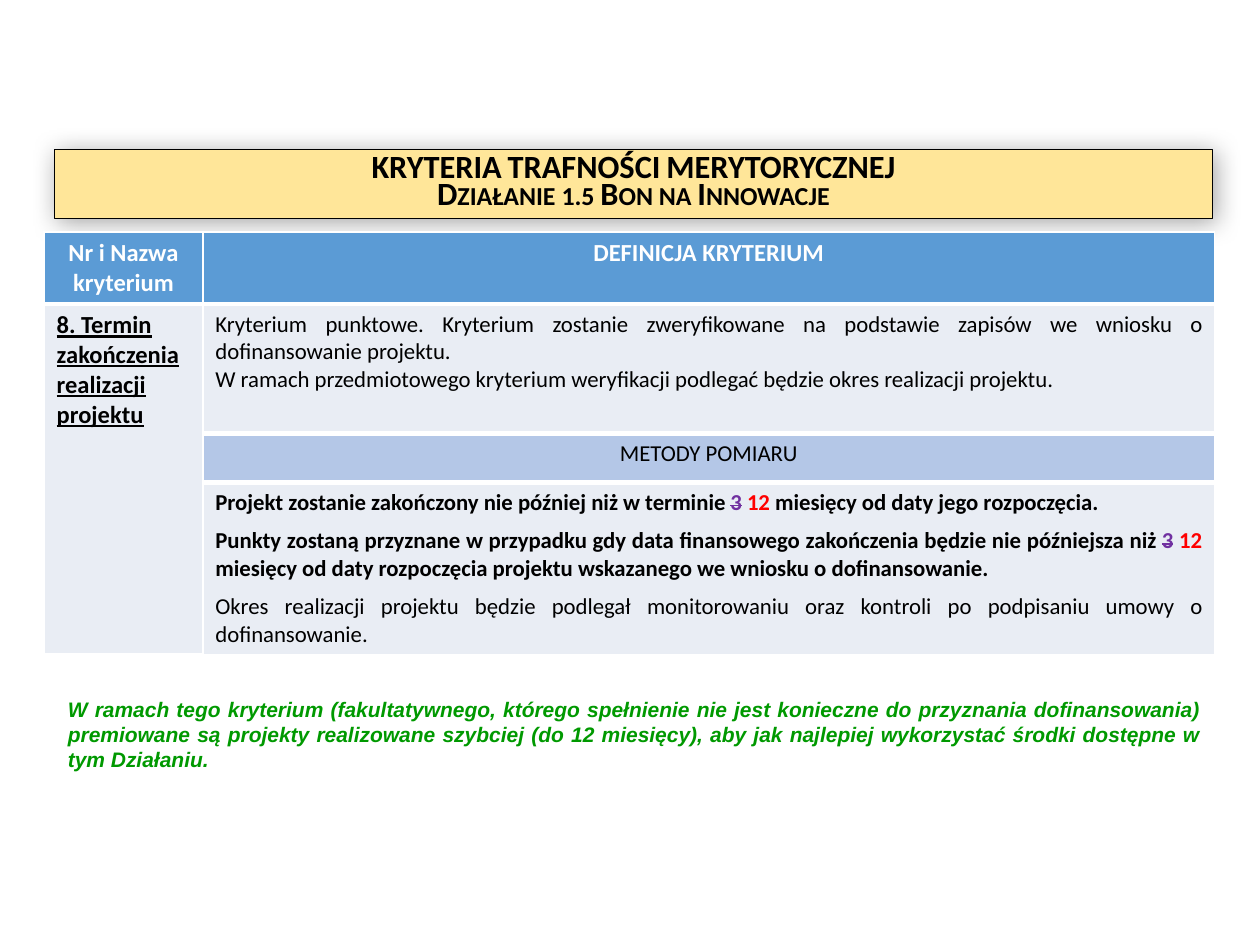
from dataclasses import dataclass

from lxml import etree
from pptx import Presentation
from pptx.dml.color import RGBColor
from pptx.enum import shapes, text
from pptx.oxml import ns
from pptx.util import Pt

ALIGN = text.PP_ALIGN


@dataclass(frozen=True)
class Theme:
    font: str = "Calibri"
    note_font: str = "Arial"
    black: str = "000000"
    white: str = "FFFFFF"
    banner: str = "FFE699"
    header: str = "5B9BD5"
    body: str = "E9EDF4"
    method: str = "B4C7E7"
    old_value: str = "7030A0"
    new_value: str = "FF0000"
    note: str = "009900"
    banner_size: float = 18.5
    header_size: float = 14
    body_size: float = 13
    note_size: float = 12
    thin: float = 1
    thick: float = 3


def add_child(parent, tag, **attributes):
    return etree.SubElement(parent, ns.qn(tag), attributes)


class SlideBuilder:
    def __init__(self, slide, theme):
        self.slide = slide
        self.theme = theme

    def run(self, paragraph, content, size, color=None, bold=False, italic=False,
            underline=False, strike=False, small_caps=False, font=None):
        run = paragraph.add_run()
        run.text = content
        run.font.name = font or self.theme.font
        run.font.size = Pt(size)
        run.font.bold = bold
        run.font.italic = italic
        run.font.underline = underline
        run.font.color.rgb = RGBColor.from_string(color or self.theme.black)
        properties = run.font._element
        if strike:
            properties.set("strike", "sngStrike")
        if small_caps:
            properties.set("cap", "small")

    def paragraphs(self, frame, items, size, align, gap=0, line_spacing=None, **style):
        """Each item is a list of (content, style changes) runs."""
        for index, runs in enumerate(items):
            paragraph = frame.add_paragraph() if index else frame.paragraphs[0]
            paragraph.alignment = align
            paragraph.space_before = Pt(gap if index else 0)
            if line_spacing:
                paragraph.line_spacing = line_spacing
            for content, changes in runs:
                self.run(paragraph, content, size, **{**style, **changes})

    def banner(self, left, top, width, height, lines):
        shape = self.slide.shapes.add_shape(
            shapes.MSO_SHAPE.RECTANGLE, Pt(left), Pt(top), Pt(width), Pt(height))
        shape.fill.solid()
        shape.fill.fore_color.rgb = RGBColor.from_string(self.theme.banner)
        shape.line.color.rgb = RGBColor.from_string(self.theme.black)
        shape.line.width = Pt(0.75)
        self.glow_shadow(shape)
        shape.text_frame.word_wrap = True
        shape.text_frame.vertical_anchor = text.MSO_ANCHOR.MIDDLE
        self.paragraphs(shape.text_frame, [[(line, {})] for line in lines],
                        self.theme.banner_size, ALIGN.CENTER, line_spacing=0.7,
                        bold=True, small_caps=True)

    def glow_shadow(self, shape):
        shape.shadow.inherit = False
        effects = shape._element.spPr.find(ns.qn("a:effectLst"))
        shadow = add_child(effects, "a:outerShdw", blurRad=str(Pt(15)), dist=str(Pt(1.5)),
                           dir="3000000", algn="ctr", rotWithShape="0")
        color = add_child(shadow, "a:srgbClr", val=self.theme.black)
        add_child(color, "a:alpha", val="35000")

    def table(self, left, top, columns, rows):
        frame = self.slide.shapes.add_table(
            len(rows), len(columns), Pt(left), Pt(top), Pt(sum(columns)), Pt(sum(rows)))
        table = frame.table
        table.horz_banding = False
        for column, width in zip(table.columns, columns):
            column.width = Pt(width)
        for row, height in zip(table.rows, rows):
            row.height = Pt(height)
        return table

    def cell(self, cell, fill, items, size, align, **style):
        cell.fill.solid()
        cell.fill.fore_color.rgb = RGBColor.from_string(fill)
        self.paragraphs(cell.text_frame, items, size, align, **style)

    def borders(self, table):
        """Thick rules between rows, thin rules everywhere else."""
        theme = self.theme
        last = len(table.rows) - 1
        for index, row in enumerate(table.rows):
            widths = {"a:lnL": theme.thin, "a:lnR": theme.thin,
                      "a:lnT": theme.thick if index else theme.thin,
                      "a:lnB": theme.thick if index < last else theme.thin}
            for cell in row.cells:
                properties = cell._tc.get_or_add_tcPr()
                for position, (tag, width) in enumerate(widths.items()):
                    line = etree.Element(ns.qn(tag), w=str(Pt(width)))
                    fill = add_child(line, "a:solidFill")
                    add_child(fill, "a:srgbClr", val=theme.white)
                    properties.insert(position, line)

    def note(self, left, top, width, height, content):
        box = self.slide.shapes.add_textbox(Pt(left), Pt(top), Pt(width), Pt(height))
        box.text_frame.word_wrap = True
        box.text_frame.auto_size = text.MSO_AUTO_SIZE.SHAPE_TO_FIT_TEXT
        self.paragraphs(box.text_frame, [[(content, {})]], self.theme.note_size,
                        ALIGN.JUSTIFY, font=self.theme.note_font,
                        color=self.theme.note, bold=True, italic=True)


def criteria_table(builder):
    theme = builder.theme
    table = builder.table(25.2, 132.5, columns=[90.7, 578.2], rows=[40.5, 74, 28, 97])

    for column, heading in enumerate(["Nr i Nazwa kryterium", "DEFINICJA KRYTERIUM"]):
        builder.cell(table.cell(0, column), theme.header, [[(heading, {})]],
                     theme.header_size, ALIGN.CENTER, color=theme.white, bold=True)

    table.cell(1, 0).merge(table.cell(3, 0))
    builder.cell(table.cell(1, 0), theme.body,
                 [[("8. Termin zakończenia realizacji projektu", {})]],
                 theme.header_size, ALIGN.LEFT, bold=True, underline=True)

    definition = [
        "Kryterium punktowe. Kryterium zostanie zweryfikowane na podstawie zapisów "
        "we wniosku o dofinansowanie projektu.",
        "W ramach przedmiotowego kryterium weryfikacji podlegać będzie okres "
        "realizacji projektu.",
    ]
    builder.cell(table.cell(1, 1), theme.body, [[(line, {})] for line in definition],
                 theme.body_size, ALIGN.JUSTIFY)
    builder.cell(table.cell(2, 1), theme.method, [[("METODY POMIARU", {})]],
                 theme.body_size, ALIGN.CENTER)

    bold = {"bold": True}
    changed_term = [("3", {"bold": True, "color": theme.old_value, "strike": True}),
                    (" ", bold),
                    ("12", {"bold": True, "color": theme.new_value})]
    measures = [
        [("Projekt zostanie zakończony nie później niż w terminie ", bold),
         *changed_term,
         (" miesięcy od daty jego rozpoczęcia.", bold)],
        [("Punkty zostaną przyznane w przypadku gdy data finansowego zakończenia "
          "będzie nie późniejsza niż ", bold),
         *changed_term,
         (" miesięcy od daty rozpoczęcia projektu wskazanego we wniosku "
          "o dofinansowanie.", bold)],
        [("Okres realizacji projektu będzie podlegał monitorowaniu oraz kontroli "
          "po podpisaniu umowy o dofinansowanie.", {})],
    ]
    builder.cell(table.cell(3, 1), theme.body, measures, theme.body_size,
                 ALIGN.JUSTIFY, gap=6)
    builder.borders(table)


def main():
    presentation = Presentation()
    presentation.slide_width, presentation.slide_height = Pt(720), Pt(540)
    slide = presentation.slides.add_slide(presentation.slide_layouts[6])
    builder = SlideBuilder(slide, Theme())

    builder.banner(31, 85.5, 662, 39.5,
                   ["KRYTERIA TRAFNOŚCI MERYTORYCZNEJ", "Działanie 1.5 Bon na Innowacje"])
    criteria_table(builder)
    builder.note(31.7, 394.5, 662, 51,
                 "W ramach tego kryterium (fakultatywnego, którego spełnienie nie jest "
                 "konieczne do przyznania dofinansowania) premiowane są projekty "
                 "realizowane szybciej (do 12 miesięcy), aby jak najlepiej wykorzystać "
                 "środki dostępne w tym Działaniu.")
    presentation.save("out.pptx")


if __name__ == "__main__":
    main()
